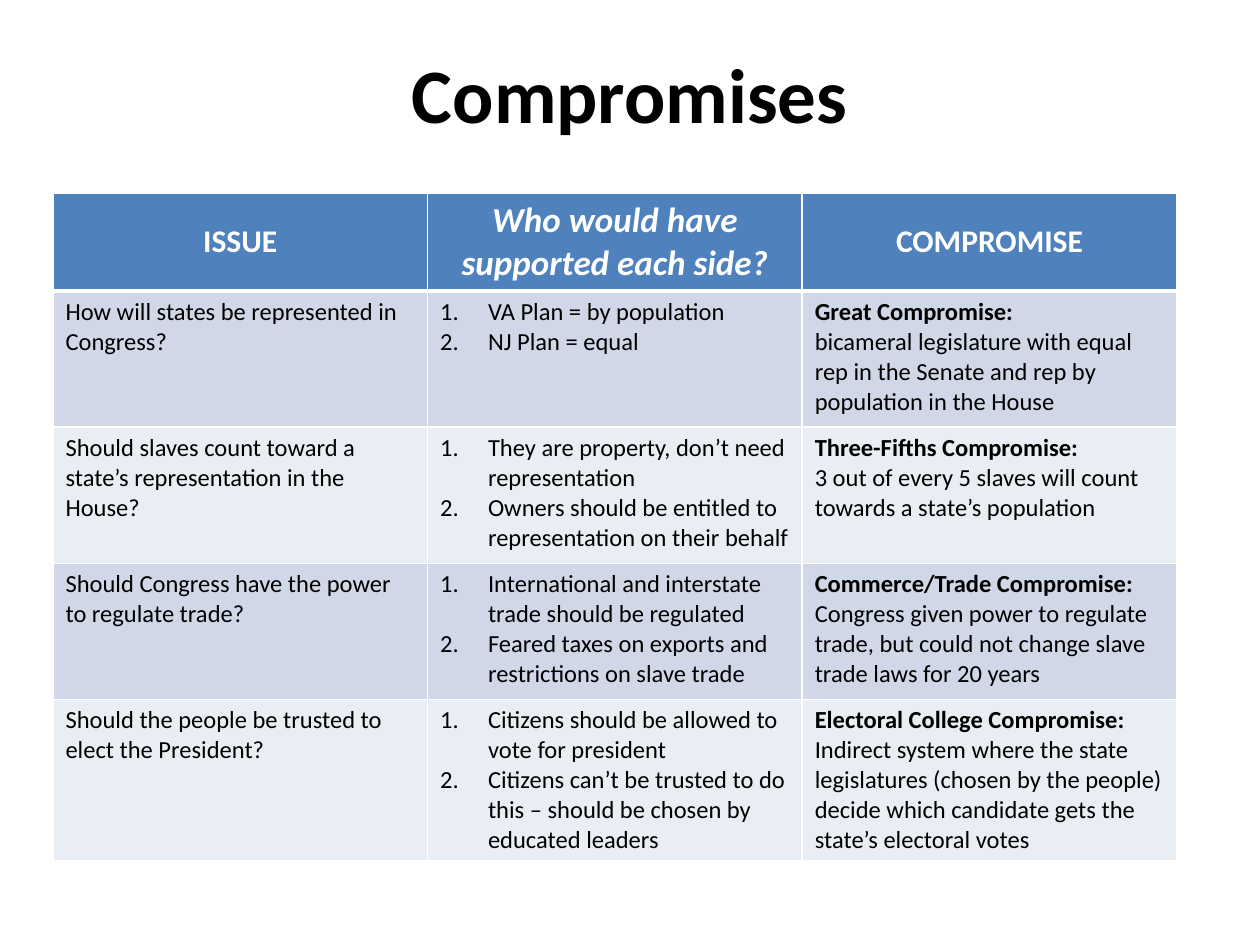
from dataclasses import dataclass

from lxml.etree import SubElement
from pptx import Presentation
from pptx.dml.color import RGBColor
from pptx.enum.text import MSO_ANCHOR, PP_ALIGN
from pptx.oxml.ns import qn
from pptx.util import Inches, Pt


@dataclass(frozen=True)
class Theme:
    font: str = "Calibri"
    ink: str = "000000"
    pale: str = "FFFFFF"
    head: str = "4F81BD"
    bands: tuple = ("D0D8E8", "E9EDF4")
    title: int = 44
    label: int = 18
    accent: int = 20
    body: int = 14
    indent: float = 0.38


HEADS = ["ISSUE", "Who would have supported each side?", "COMPROMISE"]
# Issue, the two sides, name of the compromise, its terms
ROWS = [
    ("How will states be represented in Congress?",
     ["VA Plan = by population", "NJ Plan = equal"],
     "Great Compromise:",
     "bicameral legislature with equal rep in the Senate and rep by "
     "population in the House"),
    ("Should slaves count toward a state’s representation in the House?",
     ["They are property, don’t need representation",
      "Owners should be entitled to representation on their behalf"],
     "Three-Fifths Compromise:",
     "3 out of every 5 slaves will count towards a state’s population"),
    ("Should Congress have the power to regulate trade?",
     ["International and interstate trade should be regulated",
      "Feared taxes on exports and restrictions on slave trade"],
     "Commerce/Trade Compromise:",
     "Congress given power to regulate trade, but could not change slave "
     "trade laws for 20 years"),
    ("Should the people be trusted to elect the President?",
     ["Citizens should be allowed to vote for president",
      "Citizens can’t be trusted to do this – should be chosen by "
      "educated leaders"],
     "Electoral College Compromise:",
     "Indirect system where the state legislatures (chosen by the people) "
     "decide which candidate gets the state’s electoral votes"),
]


class Deck:
    def __init__(self, theme):
        self.theme = theme
        self.prs = Presentation()
        self.prs.slide_width, self.prs.slide_height = Inches(10), Inches(7.5)
        self.slide = self.prs.slides.add_slide(self.prs.slide_layouts[5])

    def box(self, x, y, w, h):
        """Turn shares of the slide's size into lengths."""
        wide, high = self.prs.slide_width, self.prs.slide_height
        return int(x * wide), int(y * high), int(w * wide), int(h * high)

    def style(self, para, size, color, bold=False, italic=False, align=None):
        font = para.font
        font.name, font.size = self.theme.font, Pt(size)
        font.bold, font.italic = bold, italic
        font.color.rgb = RGBColor.from_string(color)
        para.alignment = align

    def title(self, text, *area):
        shape = self.slide.shapes.title
        shape.left, shape.top, shape.width, shape.height = self.box(*area)
        frame = shape.text_frame
        frame.text = text
        frame.vertical_anchor = MSO_ANCHOR.MIDDLE
        self.style(frame.paragraphs[0], self.theme.title, self.theme.ink,
                   bold=True, align=PP_ALIGN.CENTER)

    def table(self, rows, cols, heights, *area):
        grid = self.slide.shapes.add_table(rows, cols, *self.box(*area)).table
        for row, share in zip(grid.rows, heights):
            row.height = int(share * self.prs.slide_height)
        return grid

    def cell(self, cell, lines, fill, base=1):
        """Fill a cell and return its paragraphs."""
        props = cell._tc.get_or_add_tcPr()
        for side, width in (("L", 1), ("R", 1), ("T", 1), ("B", base)):
            line = SubElement(props, qn(f"a:ln{side}"), w=str(Pt(width)))
            solid = SubElement(line, qn("a:solidFill"))
            SubElement(solid, qn("a:srgbClr"), val=self.theme.pale)
        cell.fill.solid()
        cell.fill.fore_color.rgb = RGBColor.from_string(fill)
        cell.text = "\n".join(lines)
        return cell.text_frame.paragraphs

    def label(self, cell, text, accent=False):
        theme = self.theme
        para, = self.cell(cell, [text], theme.head, base=3)
        cell.vertical_anchor = MSO_ANCHOR.MIDDLE
        self.style(para, theme.accent if accent else theme.label, theme.pale,
                   bold=True, italic=accent, align=PP_ALIGN.CENTER)

    def body(self, cell, lines, fill, lead=False, count=False):
        """Plain text, with a bold first line or numbers on request."""
        theme = self.theme
        for i, para in enumerate(self.cell(cell, lines, fill)):
            self.style(para, theme.body, theme.ink, bold=lead and i == 0)
            if count:
                props = para._p.get_or_add_pPr()
                props.set("marL", str(Inches(theme.indent)))
                props.set("indent", str(-Inches(theme.indent)))
                SubElement(props, qn("a:buFont"), typeface="+mj-lt")
                SubElement(props, qn("a:buAutoNum"), type="arabicPeriod")


def main():
    theme = Theme()
    deck = Deck(theme)
    deck.title("Compromises", 0.05, 0.04, 0.9, 0.116)

    # Table: a header row above rows of equal height
    heights = [0.075] + [0.144] * len(ROWS)
    grid = deck.table(len(heights), len(HEADS), heights,
                      0.042, 0.204, 0.892, sum(heights))
    for col, text in enumerate(HEADS):
        deck.label(grid.cell(0, col), text, accent=col == 1)

    # Issues, with banded fills
    for i, (issue, sides, name, terms) in enumerate(ROWS):
        fill = theme.bands[i % 2]
        deck.body(grid.cell(i + 1, 0), [issue], fill)
        deck.body(grid.cell(i + 1, 1), sides, fill, count=True)
        deck.body(grid.cell(i + 1, 2), [name, terms], fill, lead=True)

    deck.prs.save("out.pptx")


if __name__ == "__main__":
    main()
